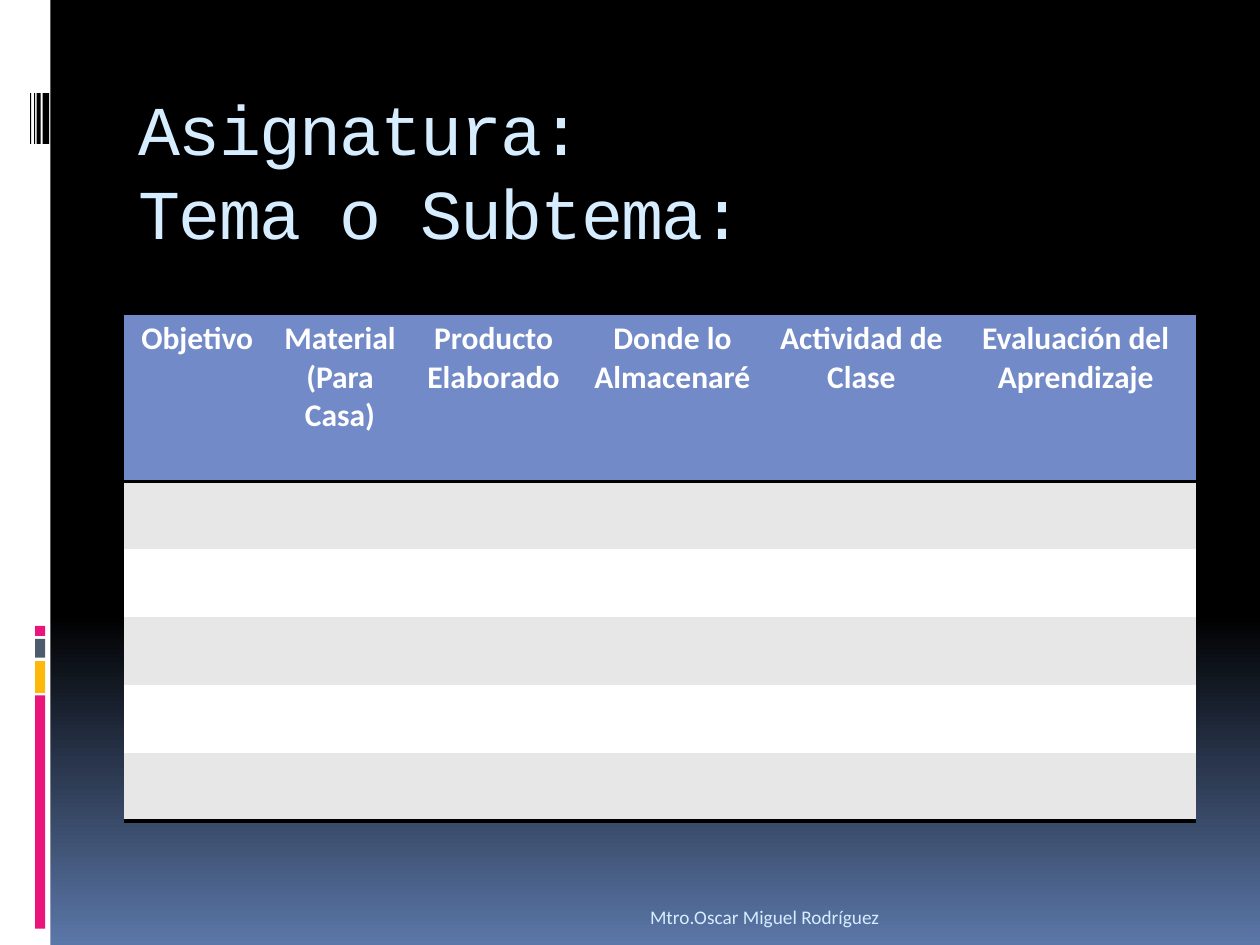
import copy
import pptx
import pptx.dml.color
import pptx.enum.dml
import pptx.enum.shapes
import pptx.enum.text
import pptx.oxml
import pptx.oxml.ns
import pptx.util

Cm = pptx.util.Cm
Pt = pptx.util.Pt
Align = pptx.enum.text.PP_ALIGN
Anchor = pptx.enum.text.MSO_ANCHOR

TITLE = ["Asignatura:", "Tema o Subtema:"]
HEADS = [
    ["Objetivo"],
    ["Material (Para Casa)"],
    ["Producto", "Elaborado"],
    ["Donde lo Almacenaré"],
    ["Actividad de Clase"],
    ["Evaluación del Aprendizaje"],
]
FOOTER = "Mtro.Oscar Miguel Rodríguez"

THEME = {
    "black": "000000", "white": "FFFFFF", "sky": "5B77A8", "pale": "D6ECFF",
    "pink": "EA157A", "gold": "FEB80A", "slate": "4E5B6F",
    "head": "738AC8", "band": "E7E7E7",
    "mono": "Courier New", "sans": "Calibri",
    "title": 40, "cell": 18, "foot": 11, "rule": 2,
}

WIDTHS = [2.97, 2.79, 3.4, 3.81, 3.81, 4.83]
HEAD_ROW, BODY_ROW, BODY_COUNT = 3.38, 1.37, 5
STOPS = [(0, "black"), (0.65, "black"), (1, "sky")]
BLOCKS = [(14.02, 4.7, "pink"), (13.33, 0.64, "gold"),
          (12.88, 0.38, "slate"), (12.62, 0.2, "pink")]
CODE = [(0.86, 0.13), (0.74, 0.08), (0.69, 0.02), (0.61, 0.02)]


def color(name):
    return pptx.dml.color.RGBColor.from_string(THEME[name])


def paint(fill, name):
    fill.solid()
    fill.fore_color.rgb = color(name)


def style(font, face, size, tint, bold=False):
    font.name = THEME[face]
    font.size = Pt(THEME[size])
    font.color.rgb = color(tint)
    font.bold = bold


def place(shape, left, top, width, height):
    shape.left, shape.top = Cm(left), Cm(top)
    shape.width, shape.height = Cm(width), Cm(height)


def add_bar(slide, left, top, width, height, tint):
    bar = slide.shapes.add_shape(pptx.enum.shapes.MSO_SHAPE.RECTANGLE,
                                 Cm(left), Cm(top), Cm(width), Cm(height))
    bar.shadow.inherit = False
    paint(bar.fill, tint)
    bar.line.fill.background()


def add_sky(slide):
    fill = slide.background.fill
    fill.gradient()
    fill.gradient_angle = 270
    first = slide.background._cSld.find(".//" + pptx.oxml.ns.qn("a:gs"))
    first.addnext(copy.deepcopy(first))
    for stop, (spot, tint) in zip(fill.gradient_stops, STOPS):
        stop.position = spot
        stop.color.rgb = color(tint)


def add_rules(cell, ruled):
    props = cell._tc.get_or_add_tcPr()
    for side in "LRTB":
        if side in ruled:
            ink = f'<a:solidFill><a:srgbClr val="{THEME["black"]}"/></a:solidFill>'
        else:
            ink = "<a:noFill/>"
        props.append(pptx.oxml.parse_xml(
            f'<a:ln{side} {pptx.oxml.ns.nsdecls("a")} '
            f'w="{Pt(THEME["rule"])}">{ink}</a:ln{side}>'))


def add_title(slide):
    title = slide.shapes.title
    place(title, 2.54, 1.42, 21.59, 2.54)
    frame = title.text_frame
    frame.word_wrap = True
    frame.auto_size = pptx.enum.text.MSO_AUTO_SIZE.NONE
    frame.vertical_anchor = Anchor.TOP
    frame.margin_top = Cm(0.33)
    para = frame.paragraphs[0]
    para.alignment = Align.LEFT
    para.line_spacing = Pt(47.5)
    for index, line in enumerate(TITLE):
        if index:
            para.add_line_break()
        run = para.add_run()
        run.text = line
        style(run.font, "mono", "title", "pale")
        run._r.get_or_add_rPr().set("spc", "-100")


def add_grid(slide):
    heights = [HEAD_ROW] + [BODY_ROW] * BODY_COUNT
    table = slide.shapes.add_table(
        len(heights), len(WIDTHS), Cm(2.49), Cm(6.32),
        Cm(sum(WIDTHS)), Cm(sum(heights))).table
    for col, width in zip(table.columns, WIDTHS):
        col.width = Cm(width)
    for index, height in enumerate(heights):
        row = table.rows[index]
        row.height = Cm(height)
        ruled = {0: "TB", 1: "T", BODY_COUNT: "B"}.get(index, "")
        tint = "head" if index == 0 else "band" if index % 2 else "white"
        for cell in row.cells:
            add_rules(cell, ruled)
            paint(cell.fill, tint)
    for cell, lines in zip(table.rows[0].cells, HEADS):
        frame = cell.text_frame
        for index, line in enumerate(lines):
            para = frame.add_paragraph() if index else frame.paragraphs[0]
            para.alignment = Align.CENTER
            run = para.add_run()
            run.text = line
            style(run.font, "sans", "cell", "white", True)


def add_footer(slide):
    box = slide.shapes.add_textbox(Cm(2.54), Cm(17.83), Cm(15.44), Cm(1.02))
    frame = box.text_frame
    frame.word_wrap = True
    frame.vertical_anchor = Anchor.BOTTOM
    para = frame.paragraphs[0]
    para.alignment = Align.RIGHT
    run = para.add_run()
    run.text = FOOTER
    style(run.font, "sans", "foot", "pale")


def main():
    deck = pptx.Presentation()
    deck.slide_width, deck.slide_height = Cm(25.4), Cm(19.05)
    slide = deck.slides.add_slide(deck.slide_layouts[5])
    add_sky(slide)
    add_bar(slide, 0, 0, 1.02, 19.05, "white")
    for top, height, tint in BLOCKS:
        add_bar(slide, 0.71, top, 0.2, height, tint)
    for left, width in CODE:
        add_bar(slide, left, 1.88, width, 1.02, "black")
    add_title(slide)
    add_grid(slide)
    add_footer(slide)
    deck.save("out.pptx")


if __name__ == "__main__":
    main()
